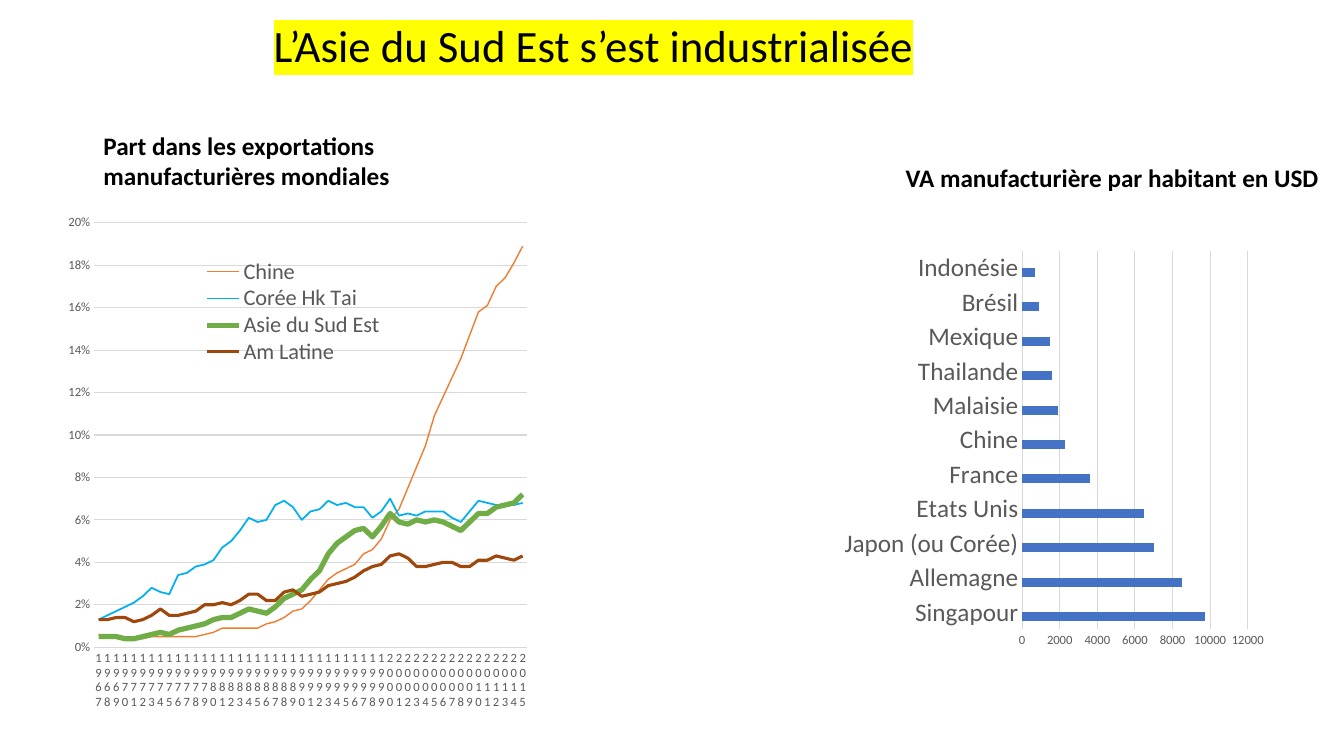
from dataclasses import dataclass

from lxml import etree
from pptx import Presentation
from pptx import util as u
from pptx.chart.chart import Chart
from pptx.chart.data import CategoryChartData
from pptx.dml.color import RGBColor
from pptx.enum import chart as ch
from pptx.enum import text
from pptx.oxml.ns import qn

PX = 9525
FONT = "Calibri"
BLACK = RGBColor(0x00, 0x00, 0x00)
GREY = RGBColor(0x59, 0x59, 0x59)
GRID = RGBColor(0xD9, 0xD9, 0xD9)
YELLOW = RGBColor(0xFF, 0xFF, 0x00)
ORANGE = RGBColor(0xED, 0x7D, 0x31)
SKY = RGBColor(0x00, 0xB0, 0xF0)
GREEN = RGBColor(0x70, 0xAD, 0x47)
BROWN = RGBColor(0x9E, 0x48, 0x0E)
BLUE = RGBColor(0x44, 0x72, 0xC4)


@dataclass(frozen=True)
class Box:
    left: int
    top: int
    width: int
    height: int

    def emu(self) -> tuple[int, int, int, int]:
        return self.left * PX, self.top * PX, self.width * PX, self.height * PX


@dataclass(frozen=True)
class Heading:
    box: Box
    words: str


@dataclass(frozen=True)
class ExportLine:
    """One region's share of exports, in thousandths, for each year."""
    name: str
    color: RGBColor
    width: float
    shares: tuple[int, ...]


TITLE = Heading(Box(251, 12, 749, 61), "L’Asie du Sud Est s’est industrialisée")
HEADINGS = (
    Heading(Box(853, 150, 443, 38), "VA manufacturière par habitant en USD"),
    Heading(Box(89, 119, 443, 68),
            "Part dans les exportations manufacturières mondiales"),
)
EXPORT_BOX = Box(47, 193, 474, 483)
VALUE_ADDED_BOX = Box(796, 231, 416, 394)
YEARS = range(1967, 2016)
EXPORTS = (
    ExportLine("Chine", ORANGE, 1, (
        6, 5, 5, 4, 4, 4, 5, 5, 5, 5, 5, 5, 6, 7, 9, 9, 9, 9, 9, 11, 12, 14, 17, 18,
        22, 27, 32, 35, 37, 39, 44, 46, 51, 60, 65, 75, 85, 95, 109, 118, 127, 136,
        147, 158, 161, 170, 174, 181, 189)),
    ExportLine("Corée Hk Tai", SKY, 1.25, (
        13, 15, 17, 19, 21, 24, 28, 26, 25, 34, 35, 38, 39, 41, 47, 50, 55, 61, 59,
        60, 67, 69, 66, 60, 64, 65, 69, 67, 68, 66, 66, 61, 64, 70, 62, 63, 62, 64,
        64, 64, 61, 59, 64, 69, 68, 67, 67, 67, 68)),
    ExportLine("Asie du Sud Est", GREEN, 3.75, (
        5, 5, 5, 4, 4, 5, 6, 7, 6, 8, 9, 10, 11, 13, 14, 14, 16, 18, 17, 16, 19, 23,
        25, 27, 32, 36, 44, 49, 52, 55, 56, 52, 57, 63, 59, 58, 60, 59, 60, 59, 57,
        55, 59, 63, 63, 66, 67, 68, 72)),
    ExportLine("Am Latine", BROWN, 2.25, (
        13, 13, 14, 14, 12, 13, 15, 18, 15, 15, 16, 17, 20, 20, 21, 20, 22, 25, 25,
        22, 22, 26, 27, 24, 25, 26, 29, 30, 31, 33, 36, 38, 39, 43, 44, 42, 38, 38,
        39, 40, 40, 38, 38, 41, 41, 43, 42, 41, 43)),
)
VALUE_ADDED = {
    "Singapour": 9700, "Allemagne": 8500, "Japon (ou Corée)": 7000,
    "Etats Unis": 6500, "France": 3600, "Chine": 2300, "Malaisie": 1900,
    "Thailande": 1600, "Mexique": 1500, "Brésil": 900, "Indonésie": 700,
}


def style_font(font, size: float, color: RGBColor) -> None:
    font.name = FONT
    font.size = u.Pt(size)
    font.color.rgb = color


def write(sp, heading: Heading, size: int, bold: bool):
    """Place the shape, set its text and return the run."""
    sp.left, sp.top, sp.width, sp.height = heading.box.emu()
    tf = sp.text_frame
    tf.text = heading.words
    tf.word_wrap = True
    tf.auto_size = text.MSO_AUTO_SIZE.NONE
    tf.vertical_anchor = text.MSO_ANCHOR.TOP
    p = tf.paragraphs[0]
    p.alignment = text.PP_ALIGN.LEFT
    r = p.runs[0]
    style_font(r.font, size, BLACK)
    r.font.bold = bold
    return r


def highlight(r, color: RGBColor) -> None:
    mark = etree.Element(qn("a:highlight"))
    etree.SubElement(mark, qn("a:srgbClr"), val=str(color))
    r.font._element.find(qn("a:solidFill")).addnext(mark)


def set_layout(parent, index: int, inner: bool, **fractions: float) -> None:
    """Give a chart part a fixed place, in fractions of the chart."""
    for old in parent.findall(qn("c:layout")):
        parent.remove(old)
    layout = etree.Element(qn("c:layout"))
    manual = etree.SubElement(layout, qn("c:manualLayout"))
    if inner:
        etree.SubElement(manual, qn("c:layoutTarget"), val="inner")
    for mode in ("xMode", "yMode"):
        etree.SubElement(manual, qn(f"c:{mode}"), val="edge")
    for name, value in fractions.items():
        etree.SubElement(manual, qn(f"c:{name}"), val=str(value))
    parent.insert(index, layout)


def show_every_label_upright(axis) -> None:
    body = axis._element.find(f"{qn('c:txPr')}/{qn('a:bodyPr')}")
    body.set("rot", "0")
    body.set("vert", "horz")
    skip = etree.Element(qn("c:tickLblSkip"), val="1")
    axis._element.find(qn("c:noMultiLvlLbl")).addprevious(skip)


def add_chart(slide, kind, box: Box, data: CategoryChartData,
              category_size: int, maximum: float, step: float) -> Chart:
    chart = slide.shapes.add_chart(kind, *box.emu(), data).chart
    chart.has_title = False
    chart.has_legend = False
    style_font(chart.font, 10, BLACK)
    category, value = chart.category_axis, chart.value_axis
    for axis, size in ((category, category_size), (value, 9)):
        style_font(axis.tick_labels.font, size, GREY)
        axis.major_tick_mark = axis.minor_tick_mark = ch.XL_TICK_MARK.NONE
    category.format.line.color.rgb = GRID
    category.format.line.width = u.Pt(0.75)
    value.format.line.fill.background()
    value.minimum_scale, value.maximum_scale, value.major_unit = 0, maximum, step
    value.has_major_gridlines = True
    value.major_gridlines.format.line.color.rgb = GRID
    value.major_gridlines.format.line.width = u.Pt(0.75)
    return chart


def add_export_chart(slide) -> None:
    data = CategoryChartData(number_format="0%")
    data.categories = [str(year) for year in YEARS]
    for line in EXPORTS:
        data.add_series(line.name, [share / 1000 for share in line.shares])
    chart = add_chart(slide, ch.XL_CHART_TYPE.LINE, EXPORT_BOX, data, 9, 0.2, 0.02)
    labels = chart.value_axis.tick_labels
    labels.number_format, labels.number_format_is_linked = "0%", False
    show_every_label_upright(chart.category_axis)
    for series, line in zip(chart.plots[0].series, EXPORTS):
        series.smooth = False
        series.marker.style = ch.XL_MARKER_STYLE.NONE
        series.format.line.color.rgb = line.color
        series.format.line.width = u.Pt(line.width)
    chart.has_legend = True
    legend = chart.legend
    legend.position = ch.XL_LEGEND_POSITION.BOTTOM
    legend.include_in_layout = False
    style_font(legend.font, 16, GREY)
    set_layout(legend._element, 1, False, x=0.17, y=0.11, w=0.64, h=0.21)
    plot_area = chart._chartSpace.find(f".//{qn('c:plotArea')}")
    set_layout(plot_area, 0, True, x=0.09, y=0.04, w=0.87, h=0.84)


def add_value_added_chart(slide) -> None:
    data = CategoryChartData()
    data.categories = list(VALUE_ADDED)
    data.add_series("Series 1", list(VALUE_ADDED.values()))
    data.add_series("Series 2", [None] * len(VALUE_ADDED))
    chart = add_chart(slide, ch.XL_CHART_TYPE.BAR_CLUSTERED, VALUE_ADDED_BOX, data,
                      18, 12000, 2000)
    plot = chart.plots[0]
    plot.gap_width = 182
    plot.vary_by_categories = False
    for series, color in zip(plot.series, (BLUE, ORANGE)):
        series.format.fill.solid()
        series.format.fill.fore_color.rgb = color


def main() -> None:
    prs = Presentation()
    prs.slide_width, prs.slide_height = 1280 * PX, 720 * PX
    slide = prs.slides.add_slide(prs.slide_layouts[5])
    highlight(write(slide.shapes.title, TITLE, 32, False), YELLOW)
    for heading in HEADINGS:
        sp = slide.shapes.add_textbox(*heading.box.emu())
        write(sp, heading, 18, True)
    add_export_chart(slide)
    add_value_added_chart(slide)
    prs.save("out.pptx")


if __name__ == "__main__":
    main()
